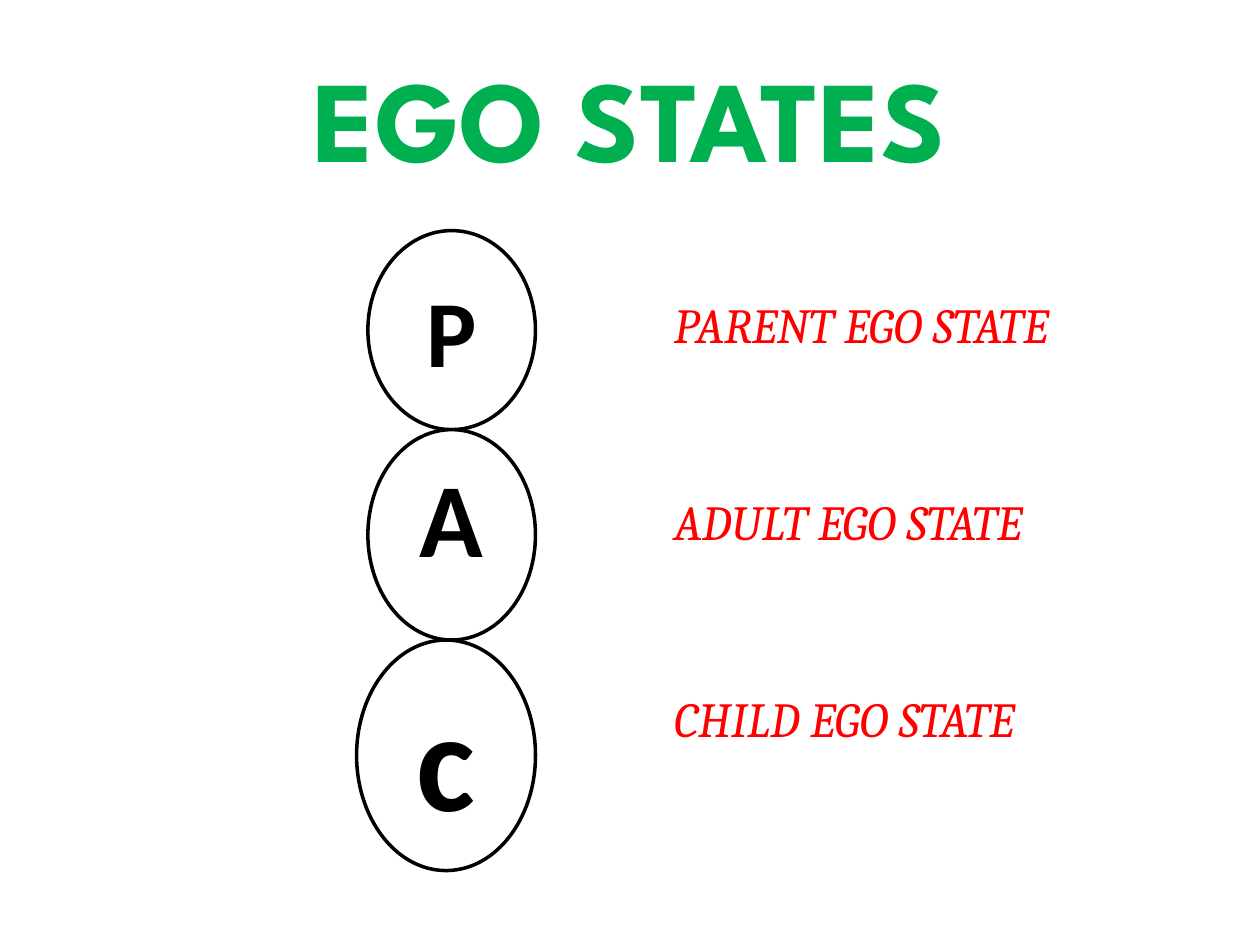
from pptx import Presentation
from pptx.dml.color import RGBColor
from pptx.enum import shapes, text
from pptx.util import Inches, Pt

GREEN = RGBColor(0x00, 0xB0, 0x50)
RED = RGBColor(0xFF, 0x00, 0x00)
BLACK = RGBColor(0x00, 0x00, 0x00)
WHITE = RGBColor(0xFF, 0xFF, 0xFF)

# letter, text size, left, height, bottom inset
EGO_CIRCLES = [
    ("P", 54, 2.92, 1.58, 0.05),
    ("A", 60, 2.92, 1.67, 0.35),
    ("c", 80, 2.83, 1.83, 0.05),
]
CIRCLES_TOP = 1.83
CIRCLES_RIGHT = 4.25
EGO_LABELS = ["PARENT EGO STATE", "ADULT EGO STATE", "CHILD EGO STATE"]


def set_font(paragraph, name, size, color, bold=False, italic=False):
    font = paragraph.font
    font.name, font.size = name, Pt(size)
    font.bold, font.italic = bold, italic
    font.color.rgb = color


def add_title(slide, left, top, width, height):
    box = slide.shapes.add_textbox(Inches(left), Inches(top), Inches(width), Inches(height))
    frame = box.text_frame
    frame.word_wrap = True
    frame.vertical_anchor = text.MSO_ANCHOR.MIDDLE
    paragraph = frame.paragraphs[0]
    paragraph.text = "EGO STATES"
    paragraph.alignment = text.PP_ALIGN.CENTER
    set_font(paragraph, "League Spartan", 66, GREEN, bold=True)


def add_circle_stack(slide, top, right):
    """Stack the circles so that each touches the next, with right edges aligned."""
    for letter, size, left, height, bottom_inset in EGO_CIRCLES:
        circle = slide.shapes.add_shape(
            shapes.MSO_SHAPE.OVAL,
            Inches(left), Inches(top), Inches(right - left), Inches(height))
        circle.shadow.inherit = False
        circle.fill.solid()
        circle.fill.fore_color.rgb = WHITE
        circle.line.color.rgb = BLACK
        circle.line.width = Pt(2)
        frame = circle.text_frame
        frame.vertical_anchor = text.MSO_ANCHOR.MIDDLE
        frame.margin_bottom = Inches(bottom_inset)
        paragraph = frame.paragraphs[0]
        paragraph.text = letter
        paragraph.alignment = text.PP_ALIGN.CENTER
        set_font(paragraph, "Calibri", size, BLACK, bold=True)
        top += height


def add_labels(slide, left, top, width, height):
    box = slide.shapes.add_textbox(Inches(left), Inches(top), Inches(width), Inches(height))
    frame = box.text_frame
    frame.word_wrap = True
    for index, label in enumerate(EGO_LABELS):
        paragraph = frame.add_paragraph() if index else frame.paragraphs[0]
        paragraph.text = label
        paragraph.space_after = Pt(79)
        set_font(paragraph, "Cambria", 28, RED, italic=True)


def main():
    presentation = Presentation()
    presentation.slide_width = Inches(10)
    presentation.slide_height = Inches(7.5)
    slide = presentation.slides.add_slide(presentation.slide_layouts[6])
    add_title(slide, 0.5, 0.3, 9, 1.25)
    add_labels(slide, 5.25, 2.29, 3.75, 4.96)
    add_circle_stack(slide, CIRCLES_TOP, CIRCLES_RIGHT)
    presentation.save("out.pptx")


if __name__ == "__main__":
    main()
